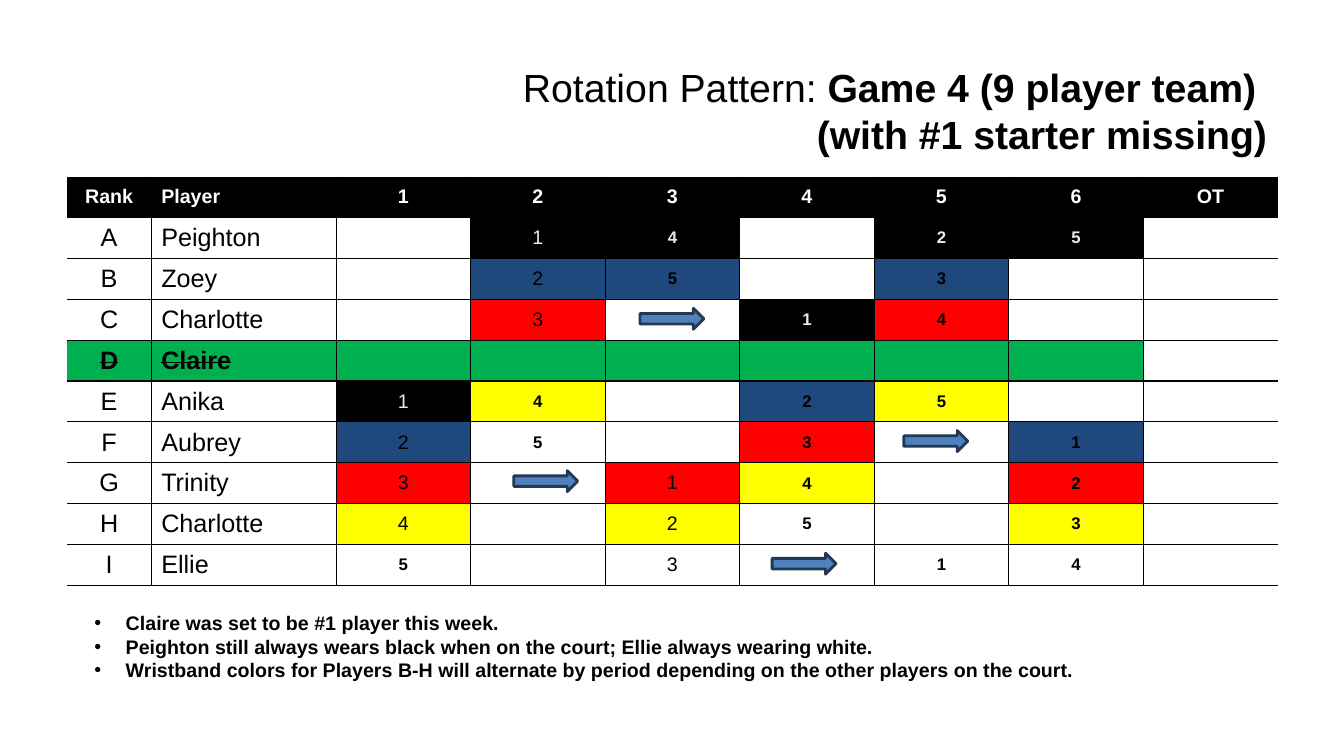
"""Builds the rotation pattern slide for a nine player team."""
from dataclasses import dataclass

from lxml.etree import SubElement
from pptx import Presentation
from pptx.dml.color import RGBColor
from pptx.enum.shapes import MSO_SHAPE
from pptx.enum.text import MSO_ANCHOR, PP_ALIGN
from pptx.oxml.ns import qn
from pptx.util import Cm, Pt


@dataclass(frozen=True)
class Theme:
    font: str = "Arial"
    black: str = "000000"
    white: str = "FFFFFF"
    cream: str = "EEECE1"
    blue: str = "1F497D"
    red: str = "FF0000"
    yellow: str = "FFFF00"
    green: str = "00B050"
    arrow: str = "4F81BD"
    edge: str = "233953"
    title: int = 28
    name: int = 18
    label: int = 14
    small: int = 12


@dataclass(frozen=True)
class Player:
    rank: str
    name: str
    turns: str
    out: bool = False


@dataclass(frozen=True)
class Arrow:
    left: float
    top: float


LOOK = Theme()
BANDS = {"K": LOOK.black, "B": LOOK.blue, "R": LOOK.red,
         "Y": LOOK.yellow, "W": LOOK.white}
HEADS = ["Rank", "Player", "1", "2", "3", "4", "5", "6", "OT"]
WIDTHS = [2.12, 4.66] + [3.39] * 7
TALL = 1.03
# A turn is wristband colour plus slot; a capital letter makes the slot bold.
PLAYERS = [
    Player("A", "Peighton", "- k1 K4 - K2 K5"),
    Player("B", "Zoey", "- b2 B5 - B3 -"),
    Player("C", "Charlotte", "- r3 - K1 R4 -"),
    Player("D", "Claire", "- - - - - -", True),
    Player("E", "Anika", "k1 Y4 - B2 Y5 -"),
    Player("F", "Aubrey", "b2 W5 - R3 - B1"),
    Player("G", "Trinity", "r3 - r1 Y4 - R2"),
    Player("H", "Charlotte", "y4 - y2 W5 - Y3"),
    Player("I", "Ellie", "W5 - w3 - W1 W4"),
]
ARROWS = [Arrow(12.95, 11.86), Arrow(16.13, 7.77),
          Arrow(19.46, 13.94), Arrow(22.78, 10.85)]
NOTES = [
    "Claire was set to be #1 player this week.",
    "Peighton still always wears black when on the court; "
    "Ellie always wearing white.",
    "Wristband colors for Players B-H will alternate by period "
    "depending on the other players on the court.",
]


def style(font, size: int, bold: bool = False, color: str = LOOK.black) -> None:
    """Set face, size, weight and colour of a font."""
    font.name, font.size, font.bold = LOOK.font, Pt(size), bold
    font.color.rgb = RGBColor.from_string(color)


def border(cell, row: int, col: int, last: int) -> None:
    """Rule the inner edges of a cell and leave the outer sides open."""
    props = cell._tc.get_or_add_tcPr()
    shown = {"L": col > 0, "R": col < len(HEADS) - 1, "T": row > 0, "B": row <= last}
    for side, drawn in shown.items():
        line = SubElement(props, qn(f"a:ln{side}"), w=str(Pt(1)))
        if drawn:
            fill = SubElement(line, qn("a:solidFill"))
            SubElement(fill, qn("a:srgbClr"), val=LOOK.black)
        else:
            SubElement(line, qn("a:noFill"))


def write(cell, text: str, size: int, bold: bool, color: str,
          left: bool = False, strike: bool = False) -> None:
    """Put styled text in a cell."""
    para = cell.text_frame.paragraphs[0]
    para.alignment = PP_ALIGN.LEFT if left else PP_ALIGN.CENTER
    if text:
        run = para.add_run()
        run.text = text
        if strike:
            run._r.get_or_add_rPr().set("strike", "sngStrike")
    style(para.font, size, bold, color)


def paint(cell, color: str) -> None:
    """Fill a cell and centre its text vertically."""
    cell.fill.solid()
    cell.fill.fore_color.rgb = RGBColor.from_string(color)
    cell.vertical_anchor = MSO_ANCHOR.MIDDLE


def add_grid(slide) -> None:
    """Draw the rotation table."""
    count = len(PLAYERS)
    grid = slide.shapes.add_table(count + 1, len(HEADS), Cm(1.69), Cm(4.45),
                                  Cm(sum(WIDTHS)), Cm(TALL * (count + 1))).table
    grid.horz_banding = False
    for col, width in zip(grid.columns, WIDTHS):
        col.width = Cm(width)
    for row in range(count + 1):
        grid.rows[row].height = Cm(TALL)
        for col in range(len(HEADS)):
            border(grid.cell(row, col), row, col, count)
    for col, head in enumerate(HEADS):
        cell = grid.cell(0, col)
        paint(cell, LOOK.black)
        write(cell, head, LOOK.label, True, LOOK.white, left=col == 1)
    for row, player in enumerate(PLAYERS, 1):
        base = LOOK.green if player.out else LOOK.white
        for col, text in enumerate((player.rank, player.name)):
            cell = grid.cell(row, col)
            paint(cell, base)
            write(cell, text, LOOK.name, player.out, LOOK.black, col == 1, player.out)
        for col, turn in enumerate(player.turns.split(), 2):
            cell = grid.cell(row, col)
            band, slot = turn[0], turn[1:]
            bold = band.isupper()
            fill = BANDS.get(band.upper(), base)
            paint(cell, fill)
            write(cell, slot, LOOK.small if bold else LOOK.label, bold,
                  LOOK.cream if fill == LOOK.black else LOOK.black)
        paint(grid.cell(row, len(HEADS) - 1), LOOK.white)
        write(grid.cell(row, len(HEADS) - 1), "", LOOK.label, False, LOOK.black)


def add_title(slide) -> None:
    """Write the two line title."""
    frame = slide.shapes.add_textbox(Cm(9.96), Cm(1.47), Cm(22.22), Cm(3.25)).text_frame
    frame.word_wrap = True
    first, second = frame.paragraphs[0], frame.add_paragraph()
    for text, bold in (("Rotation Pattern:", False), (" Game 4 (9 player team) ", True)):
        run = first.add_run()
        run.text = text
        style(run.font, LOOK.title, bold)
    second.text = "(with #1 starter missing)"
    style(second.font, LOOK.title, True)
    first.alignment = second.alignment = PP_ALIGN.RIGHT


def add_arrow(slide, arrow: Arrow) -> None:
    """Draw one arrow to the next period."""
    shape = slide.shapes.add_shape(MSO_SHAPE.RIGHT_ARROW, Cm(arrow.left),
                                   Cm(arrow.top), Cm(1.61), Cm(0.53))
    shape.shadow.inherit = False
    shape.fill.solid()
    shape.fill.fore_color.rgb = RGBColor.from_string(LOOK.arrow)
    shape.line.color.rgb = RGBColor.from_string(LOOK.edge)
    shape.line.width = Pt(2)


def add_notes(slide) -> None:
    """Write the bulleted remarks."""
    frame = slide.shapes.add_textbox(Cm(2.13), Cm(15.27), Cm(26.7), Cm(2.06)).text_frame
    frame.word_wrap = True
    for index, note in enumerate(NOTES):
        para = frame.add_paragraph() if index else frame.paragraphs[0]
        para.text = note
        props = para._p.get_or_add_pPr()
        props.set("marL", str(Cm(0.79)))
        props.set("indent", str(-Cm(0.79)))
        tint = SubElement(props, qn("a:buClr"))
        SubElement(tint, qn("a:srgbClr"), val=LOOK.black)
        SubElement(props, qn("a:buFont"), typeface=LOOK.font)
        SubElement(props, qn("a:buChar"), char="•")
        style(para.font, LOOK.label, True)


def main() -> None:
    """Build and save the slide."""
    deck = Presentation()
    deck.slide_width, deck.slide_height = Cm(33.87), Cm(19.05)
    slide = deck.slides.add_slide(deck.slide_layouts[6])
    add_grid(slide)
    add_title(slide)
    for arrow in ARROWS:
        add_arrow(slide, arrow)
    add_notes(slide)
    deck.save("out.pptx")


if __name__ == "__main__":
    main()
